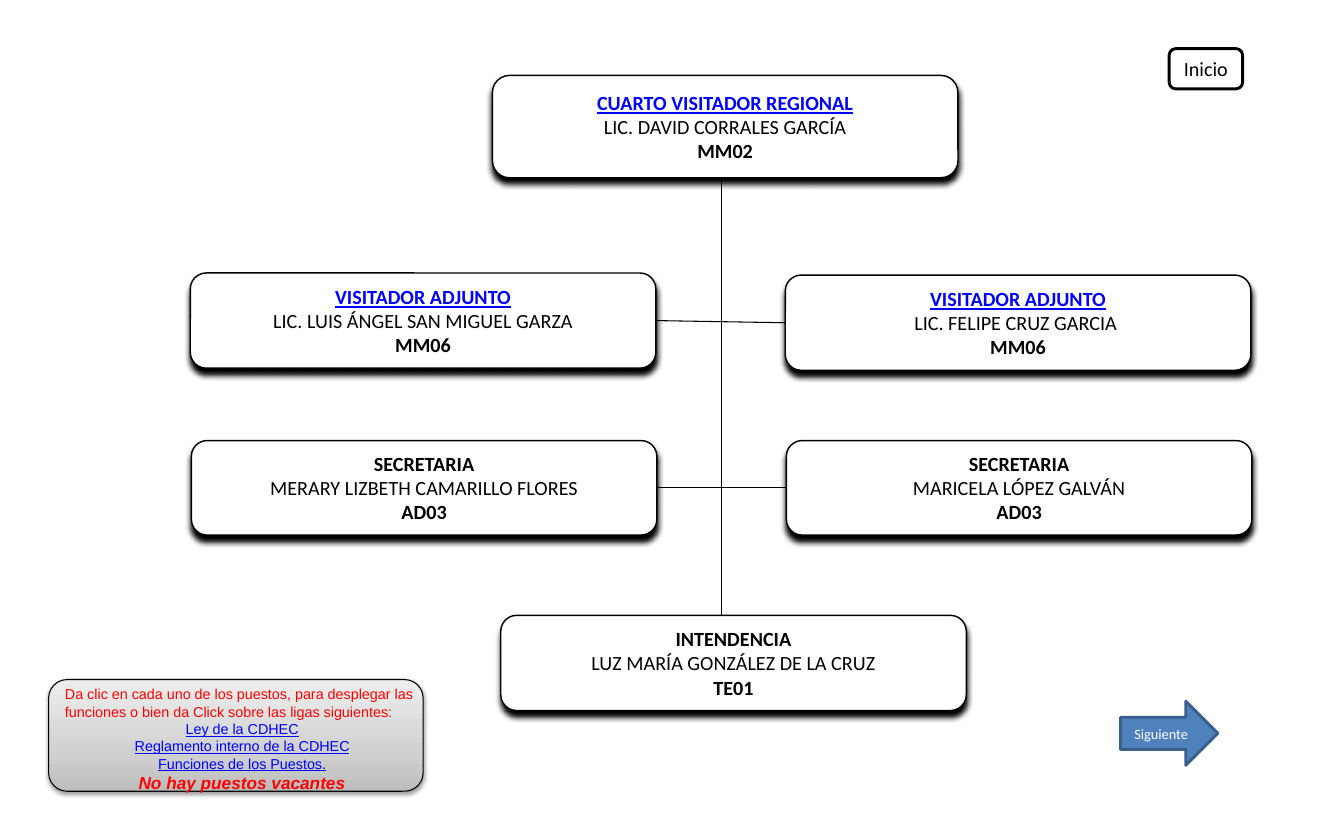
from pptx import Presentation
from pptx.dml.color import RGBColor
from pptx.enum.shapes import MSO_CONNECTOR, MSO_SHAPE
from pptx.enum.text import MSO_ANCHOR, PP_ALIGN
from pptx.oxml import parse_xml
from pptx.oxml.ns import nsdecls, qn
from pptx.util import Inches, Pt

LINE = MSO_CONNECTOR.STRAIGHT
ROUND, ARROW = MSO_SHAPE.ROUNDED_RECTANGLE, MSO_SHAPE.RIGHT_ARROW
MIDDLE, LEFT, CENTER = MSO_ANCHOR.MIDDLE, PP_ALIGN.LEFT, PP_ALIGN.CENTER

THEME = {
    "ink": "000000", "paper": "FFFFFF", "link": "0000FF", "alert": "FF0000",
    "blue": "4F81BD", "edge": "3A5F8C",
    "grays": [(0, "BDBDBD"), (35, "D1D1D1"), (100, "EEEEEE")],
    "font": "Calibri", "note": "Arial",
    "post": 14, "small": 10, "strong": 12,
}

deck = Presentation()
deck.slide_width, deck.slide_height = Inches(12.99), Inches(7.88)
slide = deck.slides.add_slide(deck.slide_layouts[6])

# Grid of 100 columns by 100 rows
COL, ROW = deck.slide_width / 100, deck.slide_height / 100


def write(frame, text, size=THEME["post"], color="ink", font="font",
          bold=False, italic=False, line=False, align=CENTER):
    para = frame.paragraphs[0]
    if para.runs:
        para = frame.add_paragraph()
    para.alignment = align
    run = para.add_run()
    run.text = text
    run.font.size, run.font.name = Pt(size), THEME[font]
    run.font.bold, run.font.italic, run.font.underline = bold, italic, line
    run.font.color.rgb = RGBColor.from_string(THEME[color])


def draw(kind, x, y, w, h, fill="paper", edge="ink", width=1, shade=None):
    shape = slide.shapes.add_shape(
        kind, int(x * COL), int(y * ROW), int(w * COL), int(h * ROW))
    shape.fill.solid()
    shape.fill.fore_color.rgb = RGBColor.from_string(THEME[fill])
    shape.line.color.rgb = RGBColor.from_string(THEME[edge])
    shape.line.width = Pt(width)
    shape.shadow.inherit = False
    if shade:
        alpha, blur, dist = shade
        shape._element.spPr.find(qn("a:effectLst")).append(parse_xml(
            f'<a:outerShdw {nsdecls("a")} blurRad="{Pt(blur)}" dist="{Pt(dist)}" '
            f'dir="5400000" algn="ctr" rotWithShape="0">'
            f'<a:srgbClr val="{THEME["ink"]}"><a:alpha val="{alpha * 1000}"/>'
            f'</a:srgbClr></a:outerShdw>'))
    shape.text_frame.vertical_anchor = MIDDLE
    shape.text_frame.word_wrap = False
    return shape


# Trunk, behind the boxes
trunk = slide.shapes.add_connector(
    LINE, int(53.66 * COL), int(22.21 * ROW), int(53.66 * COL), int(79.06 * ROW))
lines = [trunk]

# Posts: column, row, height, title, holder, level, linked title
WIDE = 34.64
posts = [
    (36.64, 9.26, 12.56, "CUARTO VISITADOR REGIONAL", "LIC. DAVID CORRALES GARCÍA", "MM02", True),
    (14.16, 33.5, 11.68, "VISITADOR ADJUNTO", "LIC. LUIS ÁNGEL SAN MIGUEL GARZA", "MM06", True),
    (58.43, 33.76, 11.68, "VISITADOR ADJUNTO", "LIC. FELIPE CRUZ GARCIA ", "MM06", True),
    (14.24, 54.06, 11.6, "SECRETARIA", "MERARY LIZBETH CAMARILLO FLORES", "AD03", False),
    (58.51, 54.06, 11.6, "SECRETARIA", "MARICELA LÓPEZ GALVÁN", "AD03", False),
    (37.26, 75.51, 11.68, "INTENDENCIA", "LUZ MARÍA GONZÁLEZ DE LA CRUZ", "TE01", False),
]
boxes = []
for x, y, high, title, name, level, linked in posts:
    box = draw(ROUND, x, y, WIDE, high, shade=(100, 4, 4))
    frame = box.text_frame
    frame.margin_left = frame.margin_right = Inches(0.17)
    frame.margin_top = frame.margin_bottom = Inches(0.09)
    write(frame, title, color="link" if linked else "ink", bold=True, line=linked)
    write(frame, name)
    write(frame, level, bold=True)
    boxes.append(box)

# Bars between the paired posts
for left, right in (boxes[1:3], boxes[3:5]):
    bar = slide.shapes.add_connector(LINE, 0, 0, 0, 0)
    bar.begin_connect(left, 3)
    bar.end_connect(right, 1)
    lines.append(bar)

for line in lines:
    line.line.color.rgb = RGBColor.from_string(THEME["ink"])
    line.line.width = Pt(0.75)
    line._element.spPr.append(parse_xml(f'<a:effectLst {nsdecls("a")}/>'))

# Home button
home = draw(ROUND, 86.99, 5.96, 5.47, 4.95, width=2)
write(home.text_frame, "Inicio")

# Note panel with gray gradient
panel = draw(ROUND, 3.62, 83.38, 27.87, 13.71, width=0.75, shade=(38, 3.1, 1.6))
panel.fill.gradient()
panel.fill.gradient_angle = 90
stops = panel._element.spPr.find(".//" + qn("a:gsLst"))
for stop in list(stops):
    stops.remove(stop)
for pos, gray in THEME["grays"]:
    stops.append(parse_xml(
        f'<a:gs {nsdecls("a")} pos="{pos * 1000}"><a:srgbClr val="{gray}"/></a:gs>'))

# Note text
note = slide.shapes.add_textbox(
    int(4.08 * COL), int(83.5 * ROW), int(27.87 * COL), int(14.47 * ROW)).text_frame
note.word_wrap = True
write(note, "Da clic en cada uno de los puestos, para desplegar las funciones "
      "o bien da Click sobre las ligas siguientes:",
      size=THEME["small"], color="alert", font="note", align=LEFT)
for text in ("Ley de la CDHEC", "Reglamento interno de la CDHEC", "Funciones de los Puestos."):
    write(note, text, size=THEME["small"], color="link", font="note", line=True)
write(note, "No hay puestos vacantes", size=THEME["strong"], color="alert",
      font="note", bold=True, italic=True)

# Next arrow
arrow = draw(ARROW, 83.37, 86.04, 7.24, 7.87, fill="blue", edge="edge", width=2)
write(arrow.text_frame, "Siguiente", size=THEME["small"], color="paper")

deck.save("out.pptx")
